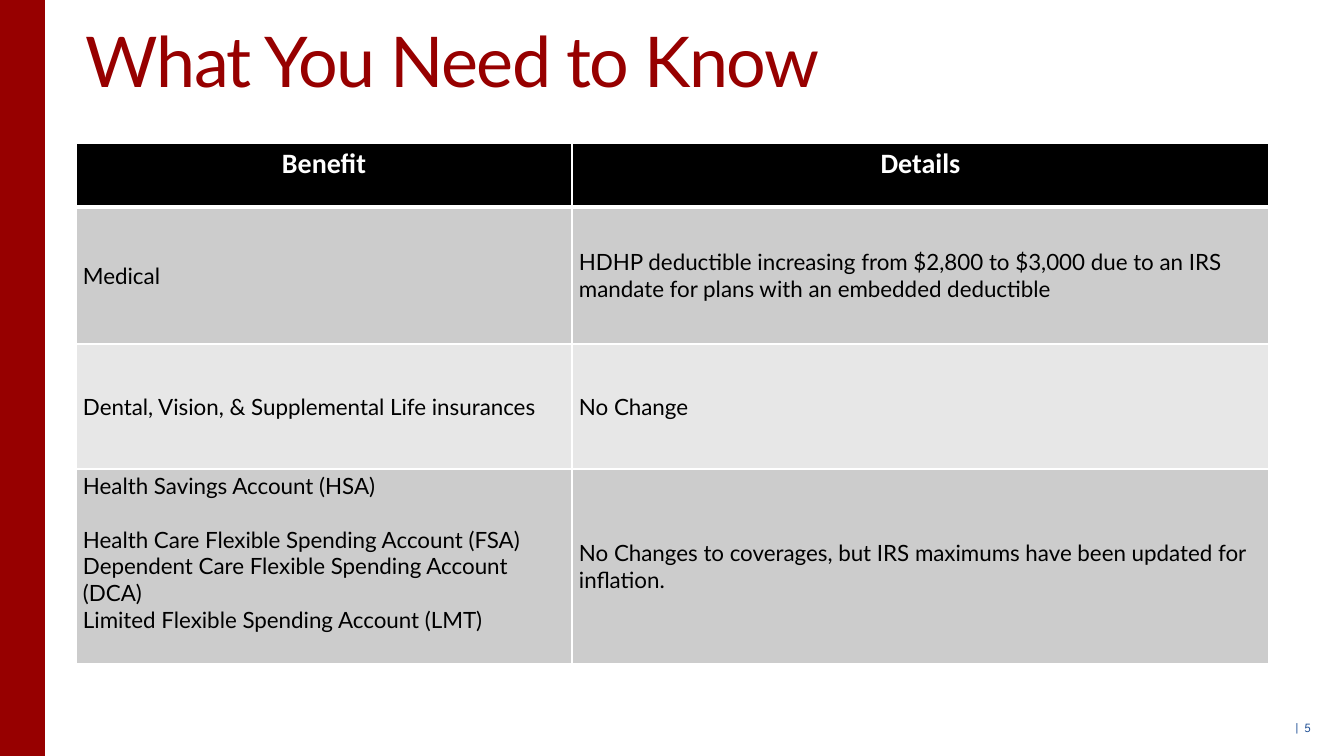
import pptx
import pptx.util
import pptx.dml.color
import pptx.enum.shapes
import pptx.enum.text
import pptx.oxml
import pptx.oxml.ns

PX = 914400 / 100.8
Pt = pptx.util.Pt
RGB = pptx.dml.color.RGBColor.from_string
ALIGN = pptx.enum.text.PP_ALIGN
ANCHOR = pptx.enum.text.MSO_ANCHOR

THEME = {
    "red": RGB("970000"),
    "header": RGB("000000"),
    "bands": [RGB("CCCCCC"), RGB("E7E7E7")],
    "title": {"name": "Lato", "size": Pt(50), "color": RGB("970000")},
    "head": {"name": "Calibri", "size": Pt(20), "color": RGB("FFFFFF"), "bold": True},
    "body": {"name": "Lato", "size": Pt(16), "color": RGB("000000"), "bold": False},
    "page": {"name": "League Spartan", "size": Pt(9), "color": RGB("245397")},
}


def px(*lengths):
    return [round(n * PX) for n in lengths]


def write(p, text, style):
    r = p.add_run()
    r.text = text
    for key, value in style.items():
        if key == "color":
            r.font.color.rgb = value
        else:
            setattr(r.font, key, value)
    return r


prs = pptx.Presentation()
prs.slide_width, prs.slide_height = px(1344, 756)
s = prs.slides.add_slide(prs.slide_layouts[6])

# Page number
tf = s.shapes.add_textbox(*px(1243, 715, 78, 41)).text_frame
tf.word_wrap = True
p = tf.paragraphs[0]
p.alignment = ALIGN.RIGHT
write(p, "|  5", THEME["page"])

# Title
tf = s.shapes.add_textbox(*px(76, 47, 780, 61)).text_frame
tf.word_wrap = True
p = tf.paragraphs[0]
p.line_spacing = Pt(35.1)
r = write(p, "What You Need to Know", THEME["title"])
r.font._element.set("spc", "-110")

# Benefits table: each cell is a list of paragraphs
rows = [
    [["Benefit"], ["Details"]],
    [["Medical"],
     ["HDHP deductible increasing from $2,800 to $3,000 due to an IRS "
      "mandate for plans with an embedded deductible"]],
    [["Dental, Vision, & Supplemental Life insurances"], ["No Change"]],
    [["Health Savings Account (HSA)",
      "Health Care Flexible Spending Account (FSA)",
      "Dependent Care Flexible Spending Account (DCA)",
      "Limited Flexible Spending Account (LMT)"],
     ["No Changes to coverages, but IRS maximums have been updated for inflation."]],
]
col_widths = px(496, 697)
row_heights = px(64, 137, 125, 195)
table = s.shapes.add_table(len(rows), len(col_widths), *px(76, 143, 1193, 521)).table
for col, width in zip(table.columns, col_widths):
    col.width = width
for row, height in zip(table.rows, row_heights):
    row.height = height

for i, row in enumerate(rows):
    is_head = i == 0
    for j, lines in enumerate(row):
        cell = table.cell(i, j)
        cell.margin_left, cell.margin_right, cell.margin_top, cell.margin_bottom = px(7, 7, 4, 4)
        top_aligned = is_head or len(lines) > 1
        cell.vertical_anchor = ANCHOR.TOP if top_aligned else ANCHOR.MIDDLE

        for side in "LRTB":
            under_head = (i, side) in [(0, "B"), (1, "T")]
            width = Pt(3 if under_head else 1)
            cell._tc.get_or_add_tcPr().append(pptx.oxml.parse_xml(
                f'<a:ln{side} {pptx.oxml.ns.nsdecls("a")} w="{width}"><a:solidFill>'
                f'<a:srgbClr val="FFFFFF"/></a:solidFill></a:ln{side}>'))
        cell.fill.solid()
        cell.fill.fore_color.rgb = THEME["header"] if is_head else THEME["bands"][(i - 1) % 2]

        tf = cell.text_frame
        for k, line in enumerate(lines):
            p = tf.add_paragraph() if k else tf.paragraphs[0]
            p.alignment = ALIGN.CENTER if is_head else ALIGN.LEFT
            if k == 1:
                p.space_before = Pt(19)
            write(p, line, THEME["head" if is_head else "body"])

# Side bar
sp = s.shapes.add_shape(pptx.enum.shapes.MSO_SHAPE.RECTANGLE, *px(0, 0, 45, 756))
sp.shadow.inherit = False
sp.fill.solid()
sp.fill.fore_color.rgb = THEME["red"]
sp.line.fill.background()

prs.save("out.pptx")
